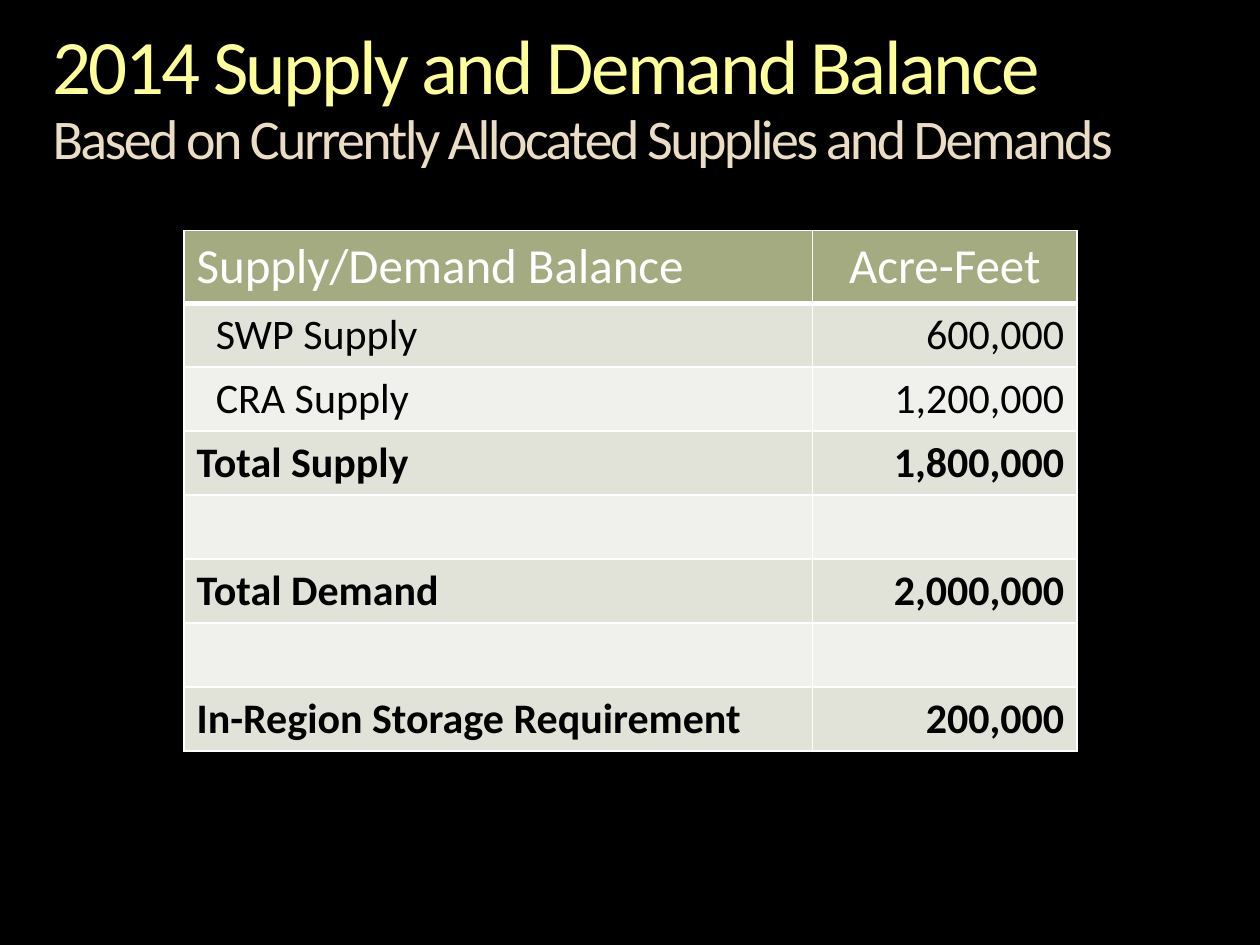
from lxml import etree
from pptx import Presentation
from pptx import util as u
from pptx.dml.color import RGBColor
from pptx.enum import text
from pptx.oxml import ns

ROWS = [
    ("Supply/Demand Balance", "Acre-Feet"),
    ("SWP Supply", "600,000"),
    ("CRA Supply", "1,200,000"),
    ("Total Supply", "1,800,000"),
    ("", ""),
    ("Total Demand", "2,000,000"),
    ("", ""),
    ("In-Region Storage Requirement", "200,000"),
]
PARTS = (1, 2)


def color(code):
    return RGBColor.from_string(code)


class Deck:
    face = "Calibri"
    head = "A5AB81"
    bands = ("F0F1ED", "E1E2D8")
    line = "FFFFFF"

    def __init__(self):
        self.prs = Presentation()
        self.prs.slide_width = u.Cm(25.4)
        self.prs.slide_height = u.Cm(19.05)
        self.slide = self.prs.slides.add_slide(self.prs.slide_layouts[5])
        fill = self.slide.background.fill
        fill.solid()
        fill.fore_color.rgb = color("000000")

    def style(self, run, size, code, bold=False):
        font = run.font
        font.name = self.face
        font.size = u.Pt(size)
        font.bold = bold
        font.color.rgb = color(code)

    def title(self, main, sub):
        box = self.slide.shapes.title
        box.left, box.top = u.Cm(1.06), u.Cm(0.56)
        box.width, box.height = u.Cm(23.29), u.Cm(2.92)
        frame = box.text_frame
        frame.margin_left = frame.margin_right = 0
        frame.margin_top = frame.margin_bottom = 0
        frame.vertical_anchor = text.MSO_ANCHOR.TOP
        frame.text = main + "\v" + sub
        para = frame.paragraphs[0]
        para.alignment = text.PP_ALIGN.LEFT
        para.line_spacing = 0.9
        for run, size, code in zip(para.runs, (44, 32), ("FFFF99", "EBDDC3")):
            self.style(run, size, code)
            run.font._element.set("spc", "-150")

    def border(self, cell, side, width):
        props = cell._tc.get_or_add_tcPr()
        edge = etree.SubElement(props, ns.qn("a:ln" + side), w=str(u.Pt(width)))
        fill = etree.SubElement(edge, ns.qn("a:solidFill"))
        etree.SubElement(fill, ns.qn("a:srgbClr"), val=self.line)

    def cell(self, cell, words, row, col):
        top = row == 0
        part = row in PARTS
        for side in "LRTB":
            self.border(cell, side, 3 if top and side == "B" else 1)
        cell.fill.solid()
        cell.fill.fore_color.rgb = color(self.head if top else self.bands[row % 2])
        if top:
            cell.vertical_anchor = text.MSO_ANCHOR.MIDDLE
        if part and col == 0:
            cell.margin_left = u.Cm(0.64)
        cell.text_frame.text = words
        para = cell.text_frame.paragraphs[0]
        if col == 1:
            para.alignment = text.PP_ALIGN.CENTER if top else text.PP_ALIGN.RIGHT
        for run in para.runs:
            self.style(run, 28 if top else 24, self.line if top else "000000",
                       not (top or part))

    def table(self, rows, widths):
        first, other = 1.45, 1.29
        frame = self.slide.shapes.add_table(
            len(rows), len(widths), u.Cm(3.71), u.Cm(4.65),
            u.Cm(sum(widths)), u.Cm(first + other * (len(rows) - 1)))
        grid = frame.table
        for col, width in enumerate(widths):
            grid.columns[col].width = u.Cm(width)
        for row, words in enumerate(rows):
            grid.rows[row].height = u.Cm(other if row else first)
            for col, word in enumerate(words):
                self.cell(grid.cell(row, col), word, row, col)


def main():
    deck = Deck()
    deck.title("2014 Supply and Demand Balance",
               "Based on Currently Allocated Supplies and Demands")
    deck.table(ROWS, (12.67, 5.33))
    deck.prs.save("out.pptx")


if __name__ == "__main__":
    main()
